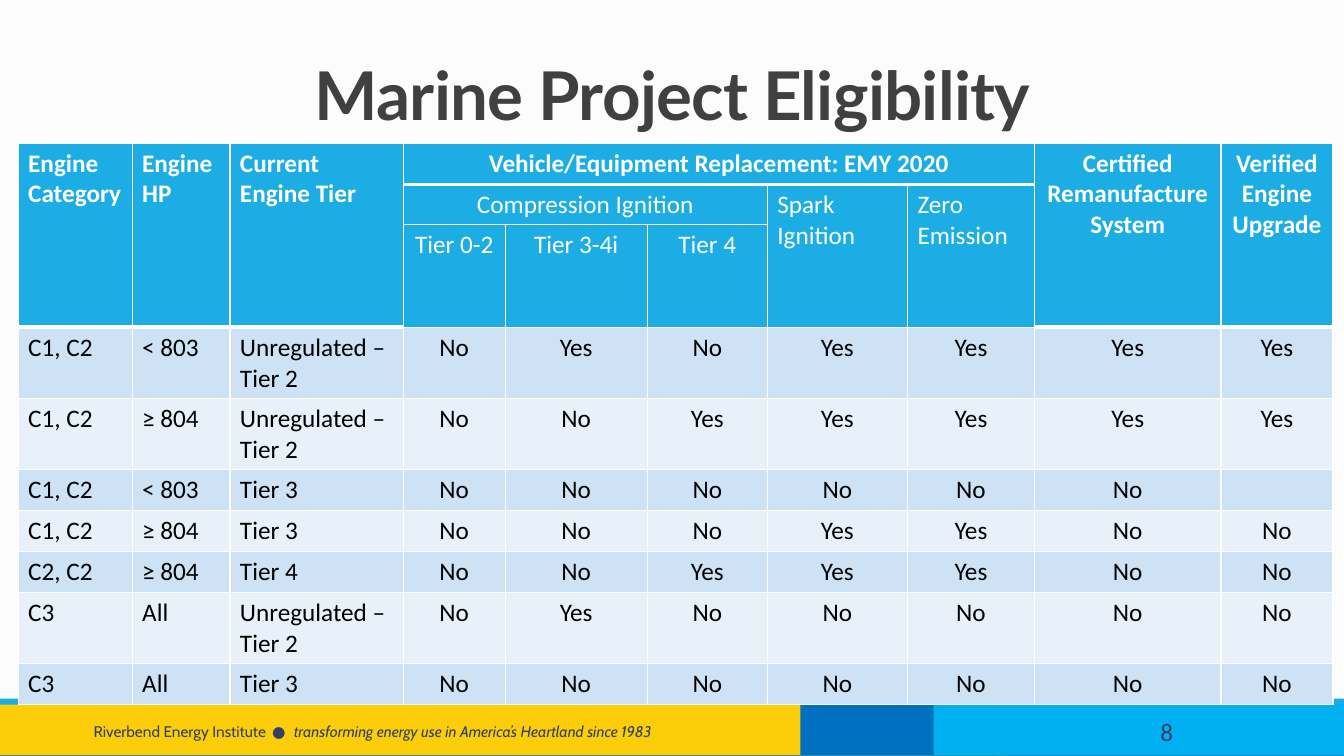
from dataclasses import dataclass

from lxml.etree import SubElement
from pptx import Presentation
from pptx.dml.color import RGBColor
from pptx.enum.shapes import MSO_SHAPE
from pptx.enum.text import MSO_ANCHOR, PP_ALIGN
from pptx.oxml.ns import qn
from pptx.slide import Slide
from pptx.table import Table, _Cell
from pptx.text.text import _Paragraph
from pptx.util import Inches, Pt


@dataclass(frozen=True)
class Theme:
    background: str = "FCFCFC"
    base: str = "2683C6"
    accent: str = "1CADE4"
    gold: str = "FCCE09"
    deep_blue: str = "0070C0"
    sky: str = "00B0F0"
    navy: str = "344068"
    title: str = "404040"
    white: str = "FFFFFF"
    black: str = "000000"
    bands: tuple[str, str] = ("CDE3F5", "E8F1FA")
    title_font: str = "Lato"
    body_font: str = "Calibri"
    footer_font: str = "Cabin"
    title_size: int = 48
    body_size: int = 18
    footer_size: int = 11
    thin: int = 1
    thick: int = 3


@dataclass(frozen=True)
class Area:
    """A rectangle in percent of the slide's width and height."""
    left: float
    top: float
    width: float
    height: float


@dataclass(frozen=True)
class Band:
    area: Area
    color: str


@dataclass(frozen=True)
class RunStyle:
    font: str
    size: int
    color: str
    bold: bool = False
    italic: bool = False
    spacing: float = 0


@dataclass(frozen=True)
class Heading:
    row: int
    column: int
    label: str
    rows: int = 1
    columns: int = 1
    bold: bool = False
    centered: bool = True


THEME = Theme()
SLIDE_WIDTH, SLIDE_HEIGHT = Inches(13.33), Inches(7.5)

BANDS = [
    Band(Area(0, 93.33, 100, 6.67), THEME.base),
    Band(Area(0, 92.4, 100, 0.93), THEME.accent),
    Band(Area(0, 93.2, 75, 6.67), THEME.gold),
    Band(Area(59.56, 93.2, 14.33, 6.67), THEME.deep_blue),
    Band(Area(69.47, 93.2, 30.53, 6.67), THEME.sky),
]
TITLE_AREA = Area(5.4, 5.33, 89.27, 13.07)
FOOTER_AREA = Area(6.23, 94.13, 47.49, 5.33)
NUMBER_AREA = Area(85.6, 94.13, 12, 5.33)

COLUMN_SHARES = [8.48, 7.28, 12.9, 7.58, 10.58, 8.93, 10.43, 9.45, 13.88, 8.33]
HEADING_SHARES = [5.47, 5.33, 13.56]
ONE_LINE, TWO_LINES = 5.41, 9.43
LABEL_COLUMNS = 3

HEADINGS = [
    Heading(0, 0, "Engine Category", rows=3, bold=True, centered=False),
    Heading(0, 1, "Engine HP", rows=3, bold=True, centered=False),
    Heading(0, 2, "Current Engine Tier", rows=3, bold=True, centered=False),
    Heading(0, 3, "Vehicle/Equipment Replacement: EMY 2020", columns=5, bold=True),
    Heading(0, 8, "Certified Remanufacture System", rows=3, bold=True),
    Heading(0, 9, "Verified Engine Upgrade", rows=3, bold=True),
    Heading(1, 3, "Compression Ignition", columns=3),
    Heading(1, 6, "Spark Ignition", rows=2, centered=False),
    Heading(1, 7, "Zero Emission", rows=2, centered=False),
    Heading(2, 3, "Tier 0-2"),
    Heading(2, 4, "Tier 3-4i"),
    Heading(2, 5, "Tier 4"),
]
UNREGULATED = "Unregulated – Tier 2"
ENGINES = [
    ("C1, C2", "< 803", UNREGULATED, "No", "Yes", "No", "Yes", "Yes", "Yes", "Yes"),
    ("C1, C2", "≥ 804", UNREGULATED, "No", "No", "Yes", "Yes", "Yes", "Yes", "Yes"),
    ("C1, C2", "< 803", "Tier 3", "No", "No", "No", "No", "No", "No", ""),
    ("C1, C2", "≥ 804", "Tier 3", "No", "No", "No", "Yes", "Yes", "No", "No"),
    ("C2, C2", "≥ 804", "Tier 4", "No", "No", "Yes", "Yes", "Yes", "No", "No"),
    ("C3", "All", UNREGULATED, "No", "Yes", "No", "No", "No", "No", "No"),
    ("C3", "All", "Tier 3", "No", "No", "No", "No", "No", "No", "No"),
]


def across(share: float) -> int:
    return round(SLIDE_WIDTH * share / 100)


def down(share: float) -> int:
    return round(SLIDE_HEIGHT * share / 100)


def place(area: Area) -> tuple[int, int, int, int]:
    return across(area.left), down(area.top), across(area.width), down(area.height)


def add_run(paragraph: _Paragraph, text: str, style: RunStyle) -> None:
    run = paragraph.add_run()
    run.text = text
    run.font.name, run.font.size = style.font, Pt(style.size)
    run.font.bold, run.font.italic = style.bold, style.italic
    run.font.color.rgb = RGBColor.from_string(style.color)
    if style.spacing:
        run.font._element.set("spc", str(round(style.spacing * 100)))


def add_band(slide: Slide, band: Band) -> None:
    bar = slide.shapes.add_shape(MSO_SHAPE.RECTANGLE, *place(band.area))
    bar.shadow.inherit = False
    bar.fill.solid()
    bar.fill.fore_color.rgb = RGBColor.from_string(band.color)
    bar.line.fill.background()


def add_line_of_text(slide: Slide, area: Area, anchor: MSO_ANCHOR) -> _Paragraph:
    frame = slide.shapes.add_textbox(*place(area)).text_frame
    frame.word_wrap = True
    frame.vertical_anchor = anchor
    return frame.paragraphs[0]


def add_border(cell: _Cell, side: str, weight: int) -> None:
    line = SubElement(cell._tc.get_or_add_tcPr(), qn(f"a:ln{side}"), w=str(Pt(weight)))
    SubElement(SubElement(line, qn("a:solidFill")), qn("a:srgbClr"), val=THEME.white)


def fill_cell(cell: _Cell, text: str, color: str, bold: bool, centered: bool) -> None:
    paragraph = cell.text_frame.paragraphs[0]
    paragraph.alignment = PP_ALIGN.CENTER if centered else PP_ALIGN.LEFT
    if text:
        add_run(paragraph, text, RunStyle(THEME.body_font, THEME.body_size, color, bold))


def rule_and_shade(table: Table) -> None:
    """Give every cell its borders, heavier below bold headings, and its fill."""
    heavy = {(h.row + h.rows - 1, h.column + i)
             for h in HEADINGS if h.bold for i in range(h.columns)}
    for row in range(len(table.rows)):
        for column in range(len(table.columns)):
            cell = table.cell(row, column)
            last = row + (cell.span_height - 1 if cell.is_merge_origin else 0)
            edges = {"L": False, "R": False,
                     "T": (row - 1, column) in heavy, "B": (last, column) in heavy}
            for side, is_heavy in edges.items():
                add_border(cell, side, THEME.thick if is_heavy else THEME.thin)
            body_row = row - len(HEADING_SHARES)
            shade = THEME.accent if body_row < 0 else THEME.bands[body_row % 2]
            cell.fill.solid()
            cell.fill.fore_color.rgb = RGBColor.from_string(shade)


def add_eligibility_table(slide: Slide) -> None:
    row_shares = HEADING_SHARES + [
        TWO_LINES if engine[2] == UNREGULATED else ONE_LINE for engine in ENGINES]
    area = Area(1.35, 18.93, sum(COLUMN_SHARES), sum(row_shares))
    table = slide.shapes.add_table(len(row_shares), len(COLUMN_SHARES), *place(area)).table
    table.first_row = table.horz_banding = False
    for column, share in zip(table.columns, COLUMN_SHARES):
        column.width = across(share)
    for row, share in zip(table.rows, row_shares):
        row.height = down(share)
    for h in HEADINGS:
        cell = table.cell(h.row, h.column)
        if h.rows * h.columns > 1:
            cell.merge(table.cell(h.row + h.rows - 1, h.column + h.columns - 1))
        fill_cell(cell, h.label, THEME.white, h.bold, h.centered)
    for row, engine in enumerate(ENGINES, len(HEADING_SHARES)):
        for column, value in enumerate(engine):
            fill_cell(table.cell(row, column), value, THEME.black, False,
                      column >= LABEL_COLUMNS)
    rule_and_shade(table)


def main() -> None:
    deck = Presentation()
    deck.slide_width, deck.slide_height = SLIDE_WIDTH, SLIDE_HEIGHT
    slide = deck.slides.add_slide(deck.slide_layouts[6])
    slide.background.fill.solid()
    slide.background.fill.fore_color.rgb = RGBColor.from_string(THEME.background)
    for band in BANDS:
        add_band(slide, band)

    footer = add_line_of_text(slide, FOOTER_AREA, MSO_ANCHOR.MIDDLE)
    look = (THEME.footer_font, THEME.footer_size, THEME.navy)
    add_run(footer, "Riverbend Energy Institute", RunStyle(*look))
    add_run(footer, " ● ", RunStyle(*look, spacing=1.7))
    add_run(footer, "transforming energy use in America’s Heartland since 1983",
            RunStyle(*look, italic=True))
    number = add_line_of_text(slide, NUMBER_AREA, MSO_ANCHOR.MIDDLE)
    add_run(number, "8", RunStyle(THEME.body_font, THEME.body_size, THEME.navy))

    title = add_line_of_text(slide, TITLE_AREA, MSO_ANCHOR.BOTTOM)
    title.alignment, title.line_spacing = PP_ALIGN.CENTER, 0.85
    add_run(title, "Marine Project Eligibility",
            RunStyle(THEME.title_font, THEME.title_size, THEME.title, bold=True, spacing=-0.5))
    add_eligibility_table(slide)
    deck.save("out.pptx")


if __name__ == "__main__":
    main()
